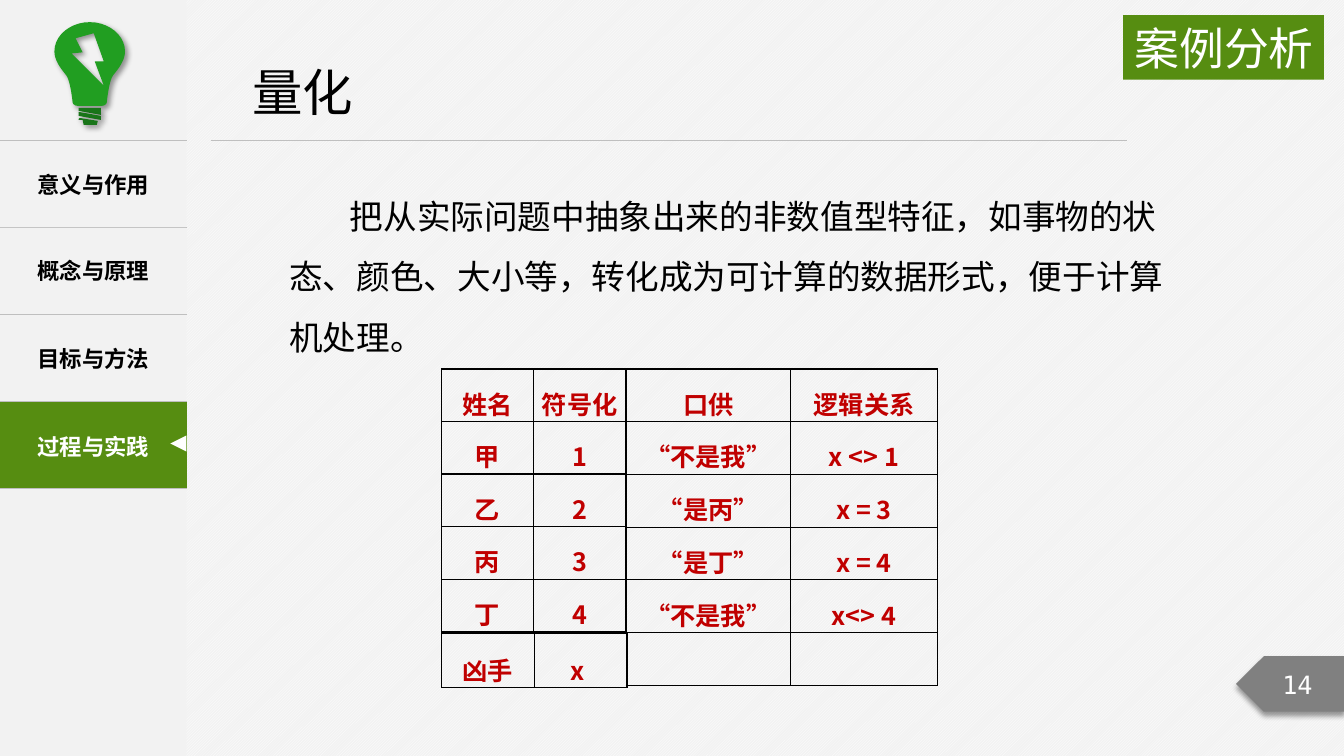
"""Build the quantification slide of the case study deck."""
from dataclasses import dataclass

import pptx
import pptx.dml.color
import pptx.enum.dml
import pptx.enum.shapes
import pptx.enum.text
import pptx.oxml.ns
import pptx.util
from lxml import etree

Inches = pptx.util.Inches
Pt = pptx.util.Pt
qn = pptx.oxml.ns.qn
Align = pptx.enum.text.PP_ALIGN
Anchor = pptx.enum.text.MSO_ANCHOR
Preset = pptx.enum.shapes.MSO_SHAPE

COLORS = {
    "black": "000000", "white": "FFFFFF", "panel": "F2F2F2", "rule": "BFBFBF", "accent": "568D11",
    "plate": "808080", "answer": "C00000", "bulb": "219E21", "socket": "197519",
}
CJK = "Noto Sans CJK SC"
MONO = "DejaVu Sans Mono"
Point = tuple[float, float]
Box = tuple[float, float, float, float]


@dataclass
class Style:
    size: float
    color: str = "black"
    bold: bool = False
    align: Align = Align.CENTER
    font: str = CJK
    spacing: float = 1.0


@dataclass
class Block:
    preset: Preset
    box: Box
    fill: str
    text: str = ""
    style: Style | None = None
    rotation: float = 0
    flipped: bool = False
    shadow_angle: int | None = None


@dataclass
class Grid:
    box: Box
    columns: list[float]
    rows: list[list[str]]
    style: Style
    border: str
    sides: str
    anchor: Anchor
    margins: tuple[float, float]
    active_row: int | None = None


@dataclass
class Outline:
    contours: list[list[Point]]
    fill: str


NAV = Style(16, bold=True)
ANSWER = Style(18, "answer", bold=True, spacing=1.44)
RESULT = Style(18, "answer", bold=True, spacing=1.5)
BLOCKS = [
    Block(Preset.RECTANGLE, (0, 2.26, 1.85, 0.84), "panel", "概念与原理", NAV),
    Block(Preset.PENTAGON, (12.26, 6.51, 1.08, 0.55), "plate", "14",
          Style(18, "white", font=MONO), flipped=True, shadow_angle=90),
    Block(Preset.ISOSCELES_TRIANGLE, (1.69, 4.32, 0.16, 0.16), "white", rotation=270),
    Block(Preset.RECTANGLE, (11.14, 0.15, 1.99, 0.64), "accent", "案例分析",
          Style(32, "white", align=Align.RIGHT)),
]
NAVIGATION = Grid((0, 1.39, 1.85, 3.46), [1.85],
                  [["意义与作用"], [""], ["目标与方法"], ["过程与实践"]],
                  NAV, "rule", "TB", Anchor.MIDDLE, (0.1, 0.05), active_row=3)
SUSPECTS = Grid((4.38, 3.66, 1.83, 2.61), [0.91, 0.92],
                [["姓名", "符号化"], ["甲", "1"], ["乙", "2"], ["丙", "3"], ["丁", "4"]],
                ANSWER, "black", "LRTB", Anchor.TOP, (0.07, 0))
STATEMENTS = Grid((6.21, 3.66, 3.09, 3.14), [1.63, 1.46],
                  [["口供", "逻辑关系"], ["“不是我”", "x <> 1"], ["“是丙”", "x = 3"],
                   ["“是丁”", "x = 4"], ["“不是我”", "x<> 4"], ["", ""]],
                  ANSWER, "black", "LRTB", Anchor.TOP, (0.07, 0))
CULPRIT = Grid((4.38, 6.28, 1.84, 0.54), [0.92, 0.92], [["凶手", "x "]],
               RESULT, "black", "LRTB", Anchor.TOP, (0.07, 0))


def curve(*controls: Point, steps: int = 10) -> list[Point]:
    """Sample a cubic curve, leaving out its first point."""
    def blend(axis: int, t: float) -> float:
        a, b, c, d = (point[axis] for point in controls)
        return a * (1 - t) ** 3 + 3 * b * t * (1 - t) ** 2 + 3 * c * t * t * (1 - t) + d * t ** 3
    return [(blend(0, step / steps), blend(1, step / steps)) for step in range(1, steps + 1)]


def bulb_outline() -> list[Point]:
    """Mirror the left half of the bulb about its axis."""
    left = [(0.89, 0.22)]
    for controls in (((0.7, 0.22), (0.54, 0.35), (0.54, 0.51)),
                     ((0.54, 0.61), (0.62, 0.7), (0.66, 0.75)),
                     ((0.7, 0.81), (0.72, 1.01), (0.72, 1.01)),
                     ((0.72, 1.03), (0.74, 1.05), (0.77, 1.05))):
        left += curve(left[-1], *controls)
    return left + [(1.78 - x, y) for x, y in reversed(left[1:])]


BOLT = [(0.71, 0.53), (0.82, 0.52), (0.75, 0.38), (0.93, 0.33), (1.03, 0.61), (0.94, 0.61), (1.03, 0.85)]
LAMP = [
    Outline([bulb_outline(), BOLT], "bulb"),
    Outline([[(0.78, 1.07), (1, 1.07), (1, 1.14), (0.78, 1.1)]], "socket"),
    Outline([[(1, 1.19), (1, 1.15), (0.78, 1.11), (0.78, 1.15)]], "socket"),
    Outline([[(0.79, 1.17), (0.97, 1.2), (0.96, 1.24), (0.83, 1.24), (0.82, 1.19), (0.78, 1.19),
              (0.78, 1.18)]], "socket"),
]


def rgb(name: str) -> pptx.dml.color.RGBColor:
    """Look up a named colour."""
    return pptx.dml.color.RGBColor.from_string(COLORS[name])


def write(frame, text: str, style: Style):
    """Put one styled paragraph in a text frame and return it."""
    frame.text = text
    paragraph = frame.paragraphs[0]
    paragraph.alignment = style.align
    paragraph.line_spacing = style.spacing
    font = paragraph.font
    font.size, font.bold, font.name = Pt(style.size), style.bold, style.font
    font.color.rgb = rgb(style.color)
    etree.SubElement(font._element, qn("a:ea"), typeface=style.font)
    return paragraph


def paint(shape, fill: str, shadow_angle: int | None = None) -> None:
    """Fill a shape, drop its line and set its shadow."""
    shape.fill.solid()
    shape.fill.fore_color.rgb = rgb(fill)
    shape.line.fill.background()
    shape.shadow.inherit = False
    if shadow_angle is not None:
        effects = shape._element.spPr.find(qn("a:effectLst"))
        shadow = etree.SubElement(effects, qn("a:outerShdw"), blurRad=str(Pt(4)), dist=str(Pt(3)),
                                  dir=str(shadow_angle * 60000), algn="tl", rotWithShape="0")
        color = etree.SubElement(shadow, qn("a:srgbClr"), val=COLORS["black"])
        etree.SubElement(color, qn("a:alpha"), val="40000")


def add_block(slide, block: Block) -> None:
    """Draw a preset shape with its text."""
    shape = slide.shapes.add_shape(block.preset, *map(Inches, block.box))
    paint(shape, block.fill, block.shadow_angle)
    shape.rotation = block.rotation
    if block.flipped:
        shape._element.spPr.xfrm.set("flipH", "1")
    if block.style:
        shape.text_frame.word_wrap = False
        shape.text_frame.vertical_anchor = Anchor.MIDDLE
        write(shape.text_frame, block.text, block.style)


def add_outline(slide, outline: Outline) -> None:
    """Draw a closed outline, with any holes."""
    contours = [[(Inches(x), Inches(y)) for x, y in contour] for contour in outline.contours]
    builder = slide.shapes.build_freeform(*contours[0][0])
    builder.add_line_segments(contours[0][1:], close=True)
    for hole in contours[1:]:
        builder.move_to(*hole[0])
        builder.add_line_segments(hole[1:], close=True)
    paint(builder.convert_to_shape(), outline.fill, 45)


def add_grid(slide, grid: Grid) -> None:
    """Draw a table with ruled cells."""
    shape = slide.shapes.add_table(len(grid.rows), len(grid.columns), *map(Inches, grid.box))
    table = shape.table
    table.first_row = table.horz_banding = False
    for column, width in zip(table.columns, grid.columns):
        column.width = Inches(width)
    for row_index, texts in enumerate(grid.rows):
        table.rows[row_index].height = Inches(grid.box[3] / len(grid.rows))
        for column_index, text in enumerate(texts):
            cell = table.cell(row_index, column_index)
            cell.margin_left = cell.margin_right = Inches(grid.margins[0])
            cell.margin_top = cell.margin_bottom = Inches(grid.margins[1])
            cell.vertical_anchor = grid.anchor
            paragraph = write(cell.text_frame, text, grid.style)
            cell.fill.background()
            if row_index == grid.active_row:
                cell.fill.solid()
                cell.fill.fore_color.rgb = rgb("accent")
                paragraph.font.color.rgb = rgb("white")
            for position, side in enumerate("LRTB"):
                line = etree.Element(qn(f"a:ln{side}"), w=str(Pt(1)))
                cell._tc.tcPr.insert(position, line)
                if side in grid.sides:
                    solid = etree.SubElement(line, qn("a:solidFill"))
                    etree.SubElement(solid, qn("a:srgbClr"), val=COLORS[grid.border])
                else:
                    etree.SubElement(line, qn("a:noFill"))


def fill_placeholder(placeholder, box: Box, text: str, style: Style):
    """Move a placeholder and give it one styled paragraph."""
    placeholder.left, placeholder.top, placeholder.width, placeholder.height = map(Inches, box)
    frame = placeholder.text_frame
    frame.auto_size = pptx.enum.text.MSO_AUTO_SIZE.NONE
    frame.vertical_anchor = Anchor.TOP
    paragraph = write(frame, text, style)
    paragraph.space_before = Pt(0)
    return paragraph


def main() -> None:
    """Assemble and save the slide."""
    presentation = pptx.Presentation()
    presentation.slide_width, presentation.slide_height = Inches(13.33), Inches(7.5)
    slide = presentation.slides.add_slide(presentation.slide_layouts[1])
    background = slide.background.fill
    background.patterned()
    background.pattern = pptx.enum.dml.MSO_PATTERN.LIGHT_UPWARD_DIAGONAL
    background.fore_color.rgb, background.back_color.rgb = rgb("white"), rgb("panel")
    add_block(slide, Block(Preset.RECTANGLE, (0, 0, 1.85, 7.5), "panel"))
    add_grid(slide, NAVIGATION)
    rule = slide.shapes.add_connector(pptx.enum.shapes.MSO_CONNECTOR.STRAIGHT,
                                      *map(Inches, (2.09, 1.39, 11.18, 1.39)))
    rule.line.color.rgb, rule.line.width = rgb("rule"), Pt(0.5)
    etree.SubElement(rule._element.spPr, qn("a:effectLst"))
    for block in BLOCKS:
        add_block(slide, block)
    for outline in LAMP:
        add_outline(slide, outline)
    fill_placeholder(slide.shapes.title, (2.4, 0.56, 4.23, 0.71), "量化", Style(36, align=Align.LEFT))
    definition = fill_placeholder(
        slide.placeholders[1], (2.77, 1.69, 8.98, 1.92),
        "把从实际问题中抽象出来的非数值型特征，如事物的状态、颜色、大小等，转化成为可计算的数据形式，便于计算机处理。",
        Style(24, align=Align.LEFT, spacing=1.5))
    properties = definition._p.get_or_add_pPr()
    properties.set("marL", "0")
    properties.set("indent", str(Inches(0.6)))
    properties.find(qn("a:defRPr")).addprevious(etree.Element(qn("a:buNone")))
    for grid in (SUSPECTS, STATEMENTS, CULPRIT):
        add_grid(slide, grid)
    presentation.save("out.pptx")


if __name__ == "__main__":
    main()
